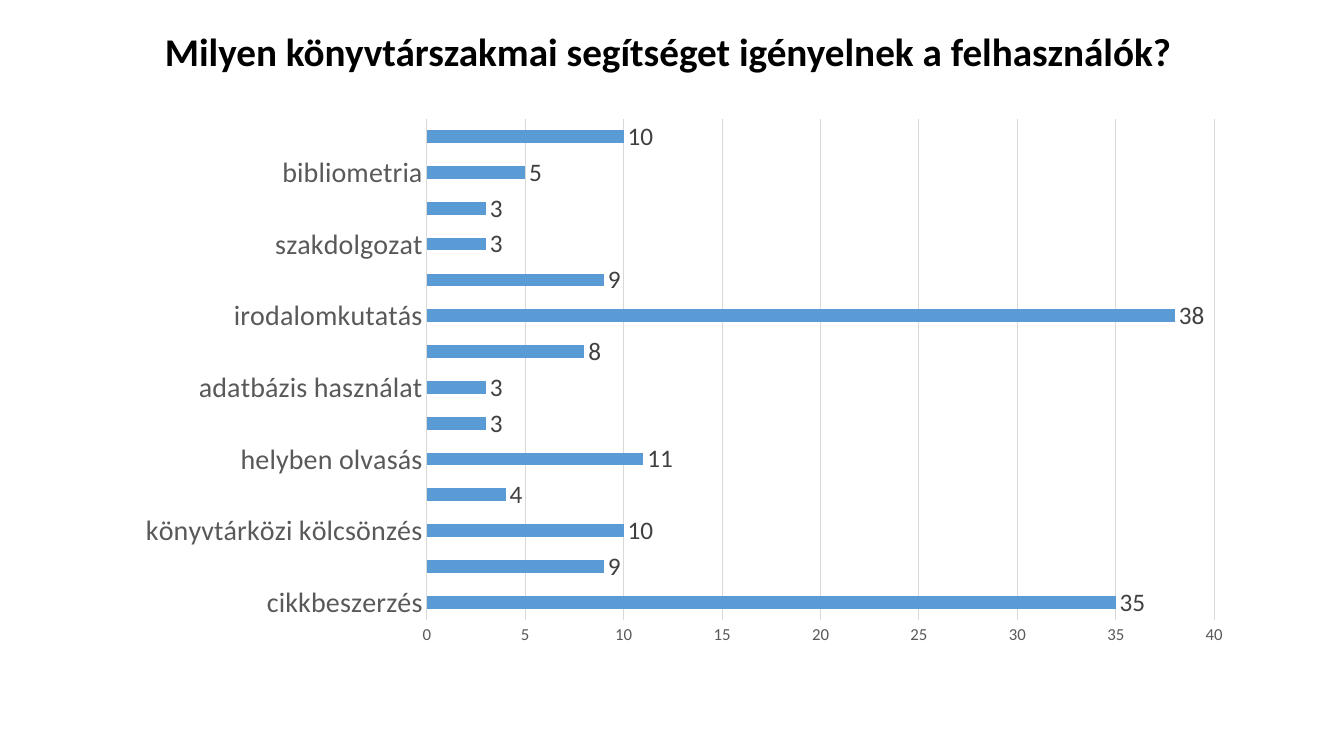
import lxml.etree
import pptx
import pptx.chart.data
import pptx.dml.color
import pptx.enum.chart
import pptx.enum.text
import pptx.oxml.ns
import pptx.util

TITLE = "Milyen könyvtárszakmai segítséget igényelnek a felhasználók?"
REQUESTS = {
    "cikkbeszerzés": 35,
    "könyvbeszerzés": 9,
    "könyvtárközi kölcsönzés": 10,
    "könyv- és folyóiratkölcsönzés": 4,
    "helyben olvasás": 11,
    "internet használat": 3,
    "adatbázis használat": 3,
    "reprográfia": 8,
    "irodalomkutatás": 38,
    "témafigyelés": 9,
    "szakdolgozat": 3,
    "jogszabályfigyelés": 3,
    "bibliometria": 5,
    "MTMT": 10,
}
PLOT_LAYOUT = {"x": 0.27, "y": 0.02, "w": 0.7, "h": 0.92}


def color(value):
    """Return the colour for a hex string."""
    return pptx.dml.color.RGBColor.from_string(value)


def set_values(target, values):
    """Set attributes of an object from a dict."""
    for name, value in values.items():
        setattr(target, name, value)


def format_font(font, size, hex_color, bold=False):
    """Give a font its face, size, weight and colour."""
    set_values(font, {"name": "Calibri", "size": pptx.util.Pt(size), "bold": bold})
    font.color.rgb = color(hex_color)


def format_line(line, hex_color):
    """Draw a thin line in the given colour."""
    line.color.rgb = color(hex_color)
    line.width = pptx.util.Pt(0.75)


def add_title(slide, text):
    """Fill, move and format the title placeholder."""
    title = slide.shapes.title
    set_values(title, {
        "left": pptx.util.Pt(39),
        "top": pptx.util.Pt(0),
        "width": pptx.util.Pt(876),
        "height": pptx.util.Pt(77),
    })
    set_values(title.text_frame, {
        "text": text,
        "word_wrap": True,
        "vertical_anchor": pptx.enum.text.MSO_ANCHOR.MIDDLE,
    })
    paragraph = title.text_frame.paragraphs[0]
    set_values(paragraph, {
        "alignment": pptx.enum.text.PP_ALIGN.CENTER,
        "line_spacing": 0.9,
    })
    format_font(paragraph.runs[0].font, 28, "000000", True)


def set_plot_layout(chart, fractions):
    """Place the inner plot area by fractions of the chart."""
    qn = pptx.oxml.ns.qn
    plot_area = chart.element.find(".//" + qn("c:plotArea"))
    for old_layout in plot_area.findall(qn("c:layout")):
        plot_area.remove(old_layout)
    layout = lxml.etree.Element(qn("c:layout"))
    plot_area.insert(0, layout)
    manual = lxml.etree.SubElement(layout, qn("c:manualLayout"))
    settings = {"layoutTarget": "inner", "xMode": "edge", "yMode": "edge", **fractions}
    for name, value in settings.items():
        lxml.etree.SubElement(manual, qn("c:" + name)).set("val", str(value))


def format_axis(axis, size):
    """Give an axis its label font and remove its tick marks."""
    tick_mark = pptx.enum.chart.XL_TICK_MARK.NONE
    set_values(axis, {"major_tick_mark": tick_mark, "minor_tick_mark": tick_mark})
    format_font(axis.tick_labels.font, size, "595959")


def add_bar_chart(slide, requests):
    """Add the horizontal bar chart of requests."""
    data = pptx.chart.data.CategoryChartData()
    data.categories = list(requests)
    data.add_series("Series 1", list(requests.values()))
    chart = slide.shapes.add_chart(
        pptx.enum.chart.XL_CHART_TYPE.BAR_CLUSTERED,
        pptx.util.Pt(88), pptx.util.Pt(77), pptx.util.Pt(803.5), pptx.util.Pt(389.5), data,
    ).chart
    set_values(chart, {"has_title": False, "has_legend": False})
    format_font(chart.font, 10, "000000")
    set_plot_layout(chart, PLOT_LAYOUT)

    format_axis(chart.category_axis, 20)
    chart.category_axis.has_major_gridlines = False
    format_line(chart.category_axis.format.line, "D9D9D9")

    value_axis = chart.value_axis
    format_axis(value_axis, 12)
    set_values(value_axis, {
        "minimum_scale": 0,
        "maximum_scale": 40,
        "major_unit": 5,
        "has_major_gridlines": True,
    })
    value_axis.format.line.fill.background()
    format_line(value_axis.major_gridlines.format.line, "D9D9D9")

    plot = chart.plots[0]
    set_values(plot, {"gap_width": 182, "vary_by_categories": False, "has_data_labels": True})
    set_values(plot.data_labels, {
        "show_value": True,
        "position": pptx.enum.chart.XL_LABEL_POSITION.OUTSIDE_END,
    })
    format_font(plot.data_labels.font, 18, "404040")
    bar_fill = plot.series[0].format.fill
    bar_fill.solid()
    bar_fill.fore_color.rgb = color("5B9BD5")


def main():
    """Build and save the slide."""
    presentation = pptx.Presentation()
    set_values(presentation, {
        "slide_width": pptx.util.Pt(960),
        "slide_height": pptx.util.Pt(540),
    })
    slide = presentation.slides.add_slide(presentation.slide_layouts[5])
    add_title(slide, TITLE)
    add_bar_chart(slide, REQUESTS)
    presentation.save("out.pptx")


if __name__ == "__main__":
    main()
